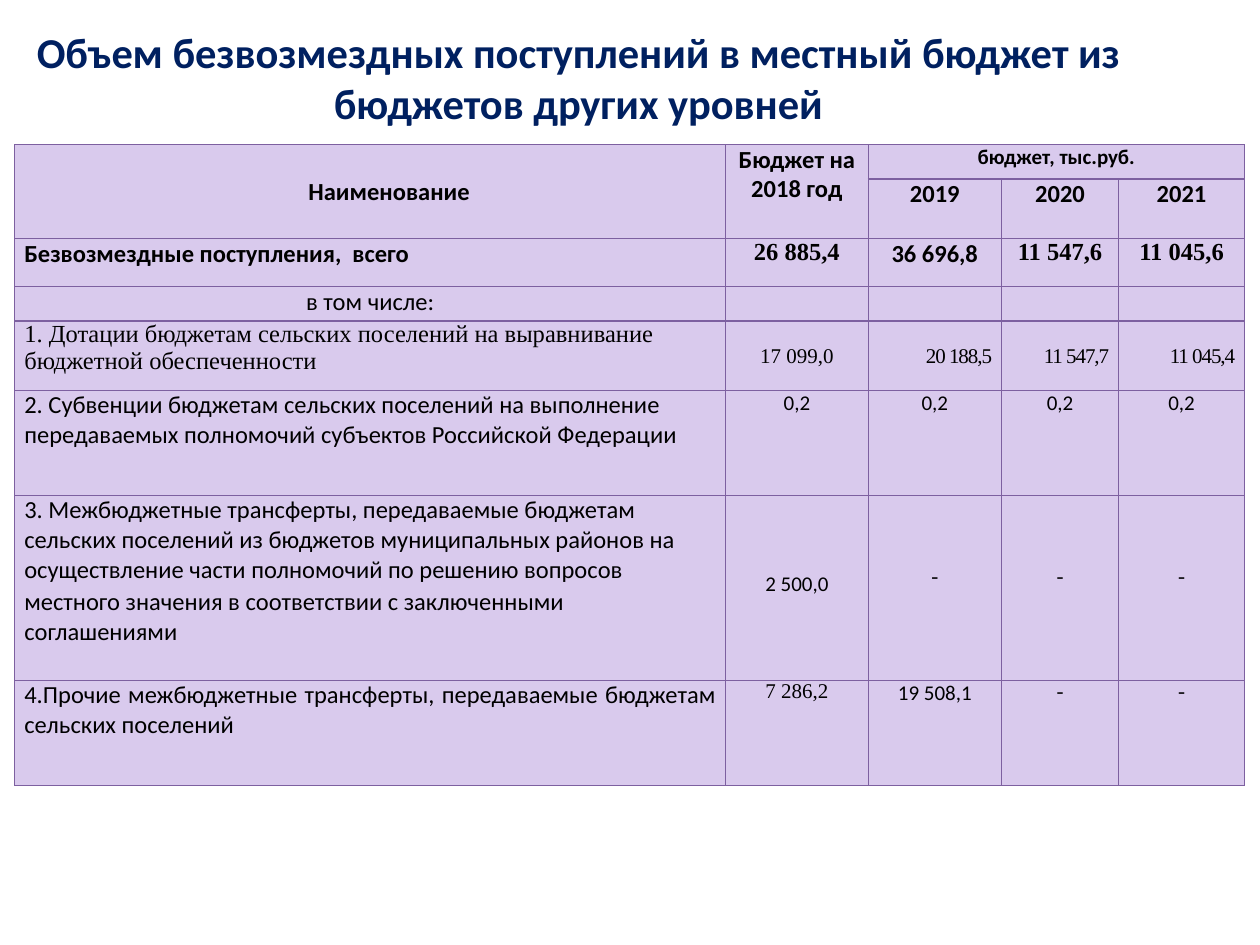
from dataclasses import dataclass

from lxml import etree
from pptx import Presentation
from pptx.dml.color import RGBColor
from pptx.enum import text
from pptx.oxml.ns import qn
from pptx.util import Cm, Pt

COLORS = {"title": "002060", "text": "000000", "fill": "D9CAED", "border": "7D60A0"}
SANS, SERIF = "Calibri", "Times New Roman"
LEFT, CENTER = text.PP_ALIGN.LEFT, text.PP_ALIGN.CENTER
RIGHT, JUSTIFY = text.PP_ALIGN.RIGHT, text.PP_ALIGN.JUSTIFY
COL_WIDTHS = [14.33, 2.87, 2.69, 2.36, 2.54]
ROW_HEIGHTS = [0.69, 0.71, 0.97, 0.69, 1.4, 2.11, 3.73, 2.13]


@dataclass
class Entry:
    """Text and format of one table cell; lengths in cm, text sizes in points."""
    label: str = ""
    size: float = 14
    font: str = SANS
    bold: bool = False
    align: text.PP_ALIGN = CENTER
    top: float = 0
    before: float = 0
    indent: float = 0
    spacing: float = 0
    anchor: text.MSO_ANCHOR = text.MSO_ANCHOR.TOP


def head(label: str, **kw) -> Entry:
    return Entry(label, bold=True, **kw)


def item(label: str, **kw) -> Entry:
    return Entry(label, **{"align": LEFT, **kw})


def value(label: str, **kw) -> Entry:
    return Entry(label, **{"size": 12, **kw})


def subsidy(label: str) -> Entry:
    return value(label, font=SERIF, align=RIGHT, top=0.48, spacing=-0.6)


def dash(top: float = 0) -> Entry:
    return value("-", font=SERIF, top=top)


ROWS = [
    [head("Наименование", indent=0.76, anchor=text.MSO_ANCHOR.MIDDLE),
     head("Бюджет на 2018 год"), head("бюджет, тыс.руб.", size=12), None, None],
    [None, None, head("2019"), head("2020"), head("2021")],
    [head("Безвозмездные поступления,  всего", align=LEFT),
     head("26 885,4", font=SERIF), head("36 696,8"),
     head("11 547,6", font=SERIF), head("11 045,6", font=SERIF)],
    [Entry("в том числе:")] + [Entry()] * 4,
    [item("1. Дотации бюджетам сельских поселений на выравнивание бюджетной "
          "обеспеченности", font=SERIF),
     value("17 099,0", font=SERIF, top=0.48),
     subsidy("20 188,5"), subsidy("11 547,7"), subsidy("11 045,4")],
    [item("2. Субвенции бюджетам сельских поселений на выполнение передаваемых "
          "полномочий субъектов Российской Федерации")] + [value("0,2")] * 4,
    [item("3. Межбюджетные трансферты, передаваемые бюджетам сельских поселений "
          "из бюджетов муниципальных районов на осуществление части полномочий "
          "по решению вопросов\nместного значения в соответствии с заключенными "
          "соглашениями", before=1.6),
     value("2 500,0", top=1.55)] + [dash(1.4)] * 3,
    [item("4.Прочие межбюджетные трансферты, передаваемые бюджетам сельских "
          "поселений", align=JUSTIFY),
     value("7 286,2", font=SERIF), value("19 508,1"), dash(), dash()],
]


def write(tf, content: str, *, size: float, font: str = SANS, bold: bool = False,
          color: str = "text", align: text.PP_ALIGN = CENTER, before: float = 0,
          indent: float = 0, spacing: float = 0) -> None:
    for i, line in enumerate(content.split("\n")):
        p = tf.add_paragraph() if i else tf.paragraphs[0]
        p.alignment = align
        p.space_before = Pt(before)
        if indent:
            p._p.get_or_add_pPr().set("indent", str(Cm(indent)))
        if not line:
            p._p.get_or_add_endParaRPr().set("sz", str(int(size * 100)))
            continue
        r = p.add_run()
        r.text = line
        r.font.size, r.font.name, r.font.bold = Pt(size), font, bold
        r.font.color.rgb = RGBColor.from_string(COLORS[color])
        if spacing:
            r._r.get_or_add_rPr().set("spc", str(int(spacing * 100)))


def add_borders(cell) -> None:
    tcPr = cell._tc.get_or_add_tcPr()
    for i, side in enumerate(("lnL", "lnR", "lnT", "lnB")):
        ln = etree.Element(qn(f"a:{side}"), w=str(Pt(0.75)))
        fill = etree.SubElement(ln, qn("a:solidFill"))
        etree.SubElement(fill, qn("a:srgbClr"), val=COLORS["border"])
        tcPr.insert(i, ln)


def format_cell(cell, entry: Entry | None) -> None:
    cell.fill.solid()
    cell.fill.fore_color.rgb = RGBColor.from_string(COLORS["fill"])
    add_borders(cell)
    e = entry or Entry()
    cell.margin_left = cell.margin_right = Cm(0.19)
    cell.margin_top, cell.margin_bottom = Cm(e.top), 0
    cell.vertical_anchor = e.anchor
    write(cell.text_frame, e.label, size=e.size, font=e.font, bold=e.bold,
          align=e.align, before=e.before, indent=e.indent, spacing=e.spacing)


def add_title(s) -> None:
    sp = s.shapes.title
    sp.left, sp.top, sp.width, sp.height = Cm(0.23), Cm(0.53), Cm(22.86), Cm(2.57)
    tf = sp.text_frame
    tf.word_wrap = True
    tf.auto_size = text.MSO_AUTO_SIZE.NONE
    tf.vertical_anchor = text.MSO_ANCHOR.TOP
    tf.margin_top = tf.margin_bottom = 0
    write(tf, "Объем безвозмездных поступлений в местный бюджет из бюджетов "
              "других уровней", size=24.3, bold=True, color="title")


def add_budget_table(s) -> None:
    table = s.shapes.add_table(len(ROW_HEIGHTS), len(COL_WIDTHS), Cm(0.3), Cm(2.92),
                               Cm(sum(COL_WIDTHS)), Cm(sum(ROW_HEIGHTS))).table
    table.first_row = table.horz_banding = False
    for col, width in zip(table.columns, COL_WIDTHS):
        col.width = Cm(width)
    for row, height in zip(table.rows, ROW_HEIGHTS):
        row.height = Cm(height)
    for i, entries in enumerate(ROWS):
        for j, entry in enumerate(entries):
            format_cell(table.cell(i, j), entry)
    for first, last in (((0, 0), (1, 0)), ((0, 1), (1, 1)), ((0, 2), (0, 4))):
        table.cell(*first).merge(table.cell(*last))


def main() -> None:
    prs = Presentation()
    prs.slide_width, prs.slide_height = Cm(25.4), Cm(19.05)
    s = prs.slides.add_slide(prs.slide_layouts[5])
    add_title(s)
    add_budget_table(s)
    prs.save("out.pptx")


if __name__ == "__main__":
    main()
